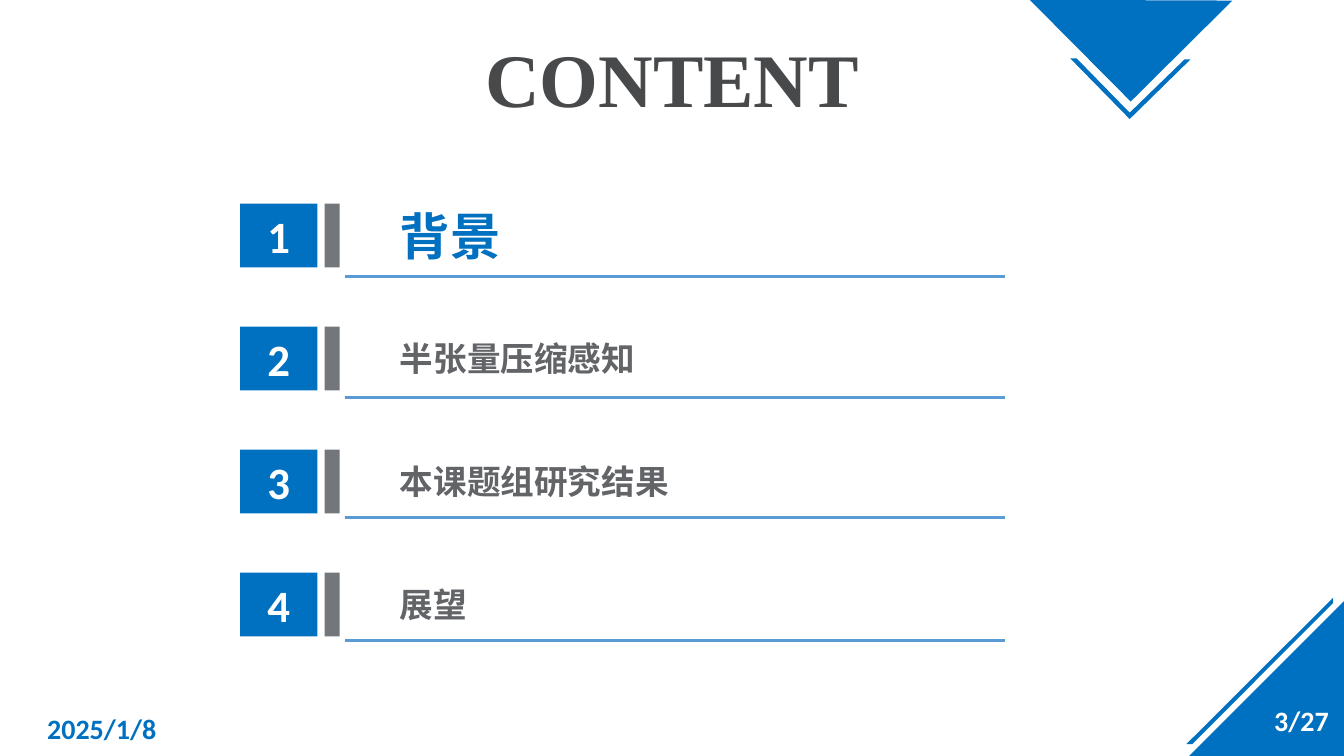
"""Build the agenda slide with four numbered sections."""
from lxml.etree import SubElement
from pptx import Presentation
from pptx.dml.color import RGBColor
from pptx.enum.shapes import MSO_CONNECTOR, MSO_SHAPE as SHAPE
from pptx.enum.text import MSO_ANCHOR as ANCHOR, PP_ALIGN as ALIGN
from pptx.oxml.ns import qn
from pptx.util import Cm, Pt

BLUE = RGBColor(0x00, 0x70, 0xC0)
LINE_BLUE = RGBColor(0x5B, 0x9B, 0xD5)
GREY = RGBColor(0x73, 0x76, 0x7A)
TEXT_GREY = RGBColor(0x62, 0x64, 0x67)
TITLE_GREY = RGBColor(0x47, 0x49, 0x4B)
WHITE = RGBColor(0xFF, 0xFF, 0xFF)
LATIN, CJK, SERIF = "Calibri", "Noto Sans CJK SC", "Times New Roman"

TITLE, DATE, PAGE = "CONTENT", "2025/1/8", "3/27"
CURRENT = 1
SECTIONS = [
    ("背景", 6.96),
    ("半张量压缩感知", 10.01),
    ("本课题组研究结果", 13.03),
    ("展望", 16.15),
]
TRIANGLES = [(29.97, 15.14, 3.91, 270), (26.7, -1.8, 3.61, 315.2)]
STRIPES = [
    [(29.9, 18.75), (33.6, 15.06), (33.6, 15.19), (30.05, 18.75)],
    [(26.97, 1.47), (27.13, 1.47), (28.47, 2.84), (29.85, 1.5), (30, 1.5), (28.47, 3)],
]
ROW_TOP, ROW_STEP, ROW_H = 5.13, 3.1, 1.61
NUMBER_X, NUMBER_W = 6.05, 1.95
BAR_X, BAR_W = 8.18, 0.38
LABEL_X, LABEL_W = 9.83, 15.5
LINE_X1, LINE_X2 = 8.69, 25.32


def paint(sp, color):
    sp.fill.solid()
    sp.fill.fore_color.rgb = color
    sp.line.fill.background()
    sp.shadow.inherit = False


def add_block(shapes, kind, x, y, w, h, color):
    sp = shapes.add_shape(kind, Cm(x), Cm(y), Cm(w), Cm(h))
    paint(sp, color)
    return sp


def write(sp, text, size, face, color, align=ALIGN.LEFT, anchor=ANCHOR.MIDDLE):
    tf = sp.text_frame
    tf.word_wrap = True
    tf.vertical_anchor = anchor
    p = tf.paragraphs[0]
    p.text = text
    p.alignment = align
    font = p.font
    font.size, font.bold, font.name = Pt(size), True, face
    font.color.rgb = color
    SubElement(p._p.pPr.find(qn("a:defRPr")), qn("a:ea")).set("typeface", face)


def add_text(shapes, x, y, w, h, *style):
    write(shapes.add_textbox(Cm(x), Cm(y), Cm(w), Cm(h)), *style)


def add_corners(shapes):
    for x, y, side, angle in TRIANGLES:
        sp = add_block(shapes, SHAPE.RIGHT_TRIANGLE, x, y, side, side, BLUE)
        sp.rotation = angle
    for points in STRIPES:
        start, *rest = [(Cm(x), Cm(y)) for x, y in points]
        outline = shapes.build_freeform(*start)
        outline.add_line_segments(rest, close=True)
        paint(outline.convert_to_shape(), BLUE)


def add_section(shapes, number, label, line_y):
    y = ROW_TOP + (number - 1) * ROW_STEP
    line = shapes.add_connector(MSO_CONNECTOR.STRAIGHT, Cm(LINE_X1), Cm(line_y),
                                Cm(LINE_X2), Cm(line_y))
    line.line.color.rgb = LINE_BLUE
    line.line.width = Pt(2.25)
    SubElement(line._element.spPr, qn("a:effectLst"))
    sp = add_block(shapes, SHAPE.RECTANGLE, NUMBER_X, y, NUMBER_W, ROW_H, BLUE)
    write(sp, str(number), 32, LATIN, WHITE, ALIGN.CENTER)
    add_block(shapes, SHAPE.RECTANGLE, BAR_X, y, BAR_W, ROW_H, GREY)
    if number == CURRENT:
        shift, height, size, color = -0.08, 1.8, 36, BLUE
    else:
        shift, height, size, color = 0.15, 1.27, 24, TEXT_GREY
    add_text(shapes, LABEL_X, y + shift, LABEL_W, height,
             label, size, CJK, color, ALIGN.LEFT, ANCHOR.TOP)


def main():
    prs = Presentation()
    prs.slide_width, prs.slide_height = Cm(33.87), Cm(19.05)
    shapes = prs.slides.add_slide(prs.slide_layouts[6]).shapes
    add_corners(shapes)
    for number, (label, line_y) in enumerate(SECTIONS, 1):
        add_section(shapes, number, label, line_y)
    add_text(shapes, 11.1, 0.69, 11.68, 2.57,
             TITLE, 54, SERIF, TITLE_GREY, ALIGN.CENTER, ANCHOR.TOP)
    add_text(shapes, 0.94, 17.83, 7.62, 1.02, DATE, 20, LATIN, BLUE)
    add_text(shapes, 31.17, 17.65, 2.57, 1.02, PAGE, 20, LATIN, WHITE, ALIGN.RIGHT)
    prs.save("out.pptx")


if __name__ == "__main__":
    main()
